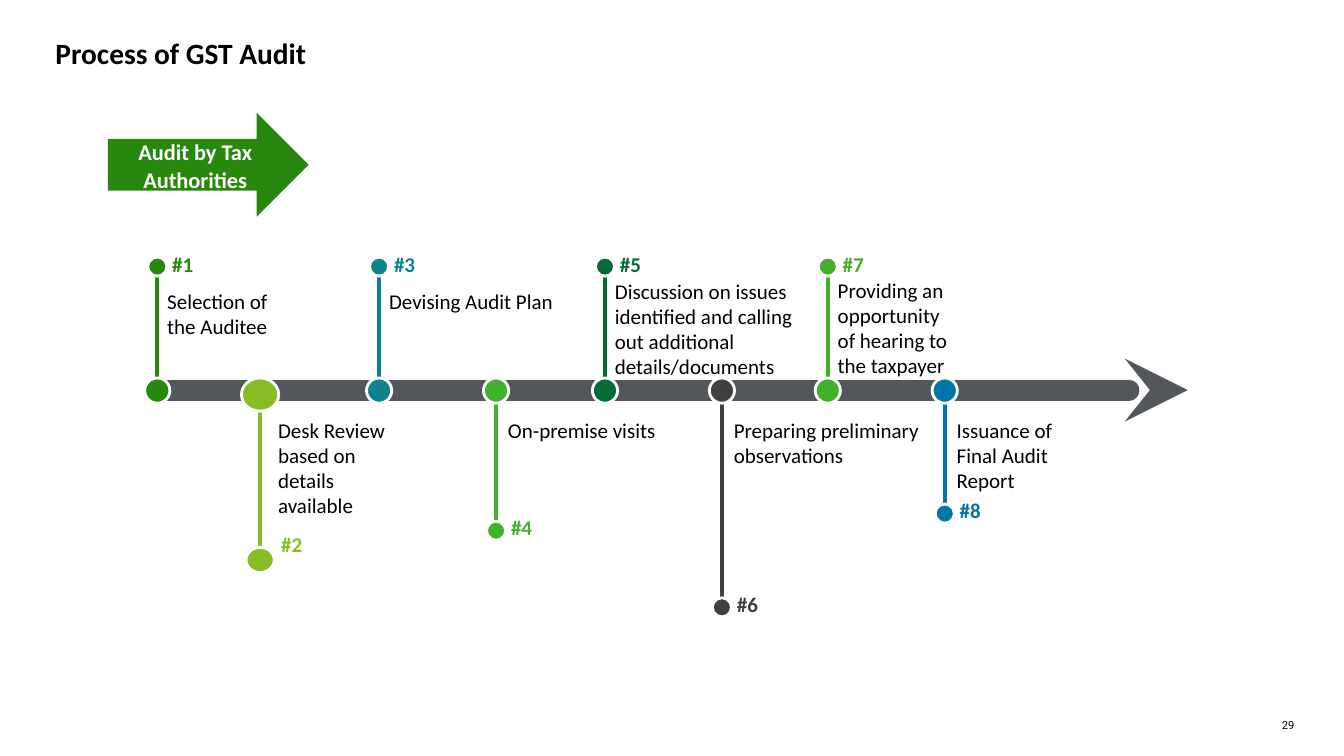
from collections import namedtuple

from lxml import etree
from pptx import Presentation
from pptx import util as u
from pptx.dml.color import RGBColor
from pptx.enum import shapes, text
from pptx.oxml.ns import qn

Box = namedtuple("Box", "left top width height")
Step = namedtuple("Step", "x color words note_top note_width note_height dot_top big",
                  defaults=(False,))

BLACK, WHITE, GREEN, AXIS = "000000", "FFFFFF", "26890D", "53565A"
UP_DOT = 0.1
STEPS = [
    Step(0.01, GREEN, "Selection of the Auditee", 0.36, 1.42, 0.61, UP_DOT),
    Step(1.03, "86BC25", "Desk Review based on details available", 1.64, 1.52, 1.11, 2.98, True),
    Step(2.21, "0D8390", "Devising Audit Plan", 0.36, 1.89, 0.35, UP_DOT),
    Step(3.37, "43B02A", "On-premise visits", 1.64, 1.86, 0.35, 2.72),
    Step(4.45, "046A38", "Discussion on issues identified and calling out additional details/documents",
         0.26, 2.02, 1.11, UP_DOT),
    Step(5.61, "404040", "Preparing preliminary observations", 1.64, 2.05, 0.61, 3.48),
    Step(6.66, "43B02A", "Providing an opportunity of hearing to the taxpayer", 0.25, 1.42, 1.11, UP_DOT),
    Step(7.82, "0076A8", "Issuance of Final Audit Report", 1.64, 1.52, 0.86, 2.55),
]


def rgb(value):
    return RGBColor.from_string(value)


def inches(*values):
    return [u.Inches(value) for value in values]


def write(frame, words, size, color, bold=False, name="Calibri", **paragraph_format):
    para = frame.paragraphs[0]
    for key, value in paragraph_format.items():
        setattr(para, key, value)
    span = para.add_run()
    span.text = words
    for key, value in {"name": name, "size": u.Pt(size), "bold": bold}.items():
        setattr(span.font, key, value)
    span.font.color.rgb = rgb(color)


def set_margins(frame, margin):
    for side in ("left", "top", "right", "bottom"):
        setattr(frame, f"margin_{side}", u.Inches(margin))


def add_text(page, box, words, size, color, wrap=True, margin=None, **formats):
    frame = page.shapes.add_textbox(*inches(*box)).text_frame
    frame.word_wrap = wrap
    if margin is not None:
        set_margins(frame, margin)
    write(frame, words, size, color, **formats)


def add_line(page, start, end, color, width):
    line = page.shapes.add_connector(shapes.MSO_CONNECTOR.STRAIGHT, *inches(*start, *end))
    line.line.color.rgb = rgb(color)
    line.line.width = u.Pt(width)
    etree.SubElement(line._element.spPr, qn("a:effectLst"))
    return line


def add_dot(page, x, top, width, height, color):
    dot = page.shapes.add_shape(shapes.MSO_SHAPE.OVAL, *inches(x - width / 2, top, width, height))
    dot.shadow.inherit = False
    dot.fill.solid()
    dot.fill.fore_color.rgb = rgb(color)
    dot.line.color.rgb = rgb(WHITE)
    dot.line.width = u.Pt(2)


def add_heading(page, box):
    add_text(page, box, "Process of GST Audit", 21, BLACK, margin=0, bold=True)


def add_page_number(page, box):
    add_text(page, box, "29", 8, BLACK, margin=0, name="Roboto", alignment=text.PP_ALIGN.RIGHT)


def add_banner(page, box):
    arrow = page.shapes.add_shape(shapes.MSO_SHAPE.RIGHT_ARROW, *inches(*box))
    arrow.shadow.inherit = False
    arrow.fill.solid()
    arrow.fill.fore_color.rgb = rgb(GREEN)
    arrow.line.fill.background()
    frame = arrow.text_frame
    frame.word_wrap = True
    frame.vertical_anchor = text.MSO_ANCHOR.MIDDLE
    set_margins(frame, 0.1)
    write(frame, "Audit by Tax Authorities", 16, WHITE, bold=True,
          alignment=text.PP_ALIGN.CENTER, line_spacing=1.06)


def add_step(page, box, number, step):
    x = box.left + step.x
    hub_top, dot_top = box.top + 1.3, box.top + step.dot_top
    hub_width, hub_height = (0.37, 0.33) if step.big else (0.25, 0.25)
    dot_width, dot_height = (0.28, 0.25) if step.big else (0.19, 0.19)
    above = dot_top < hub_top
    if above:
        stem = dot_top + dot_height, hub_top
        note_shift, label_lift = 0, 0.1
    else:
        stem = dot_top, hub_top + hub_height
        note_shift, label_lift = (0.08, 0.21) if step.big else (0.02, 0.11)
    label_shift = 0.11 if step.big else 0.05
    add_line(page, (x, stem[0]), (x, stem[1]), step.color, 3)
    add_dot(page, x, hub_top, hub_width, hub_height, step.color)
    add_dot(page, x, dot_top, dot_width, dot_height, step.color)
    note = Box(x + note_shift, box.top + step.note_top, step.note_width, step.note_height)
    add_text(page, note, step.words, 15, BLACK)
    label = Box(x + label_shift, dot_top - label_lift, 0.41, 0.35)
    add_text(page, label, f"#{number}", 15, step.color, wrap=False, bold=True)


def add_timeline(page, box):
    axis_y = box.top + 1.42
    axis = add_line(page, (box.left, axis_y), (box.left + box.width, axis_y), AXIS, 15)
    outline = axis.line._get_or_add_ln()
    outline.set("cap", "rnd")
    etree.SubElement(outline, qn("a:round"))
    etree.SubElement(outline, qn("a:tailEnd"), type="stealth")
    for number, step in enumerate(STEPS, 1):
        add_step(page, box, number, step)


def main():
    deck = Presentation()
    deck.slide_width, deck.slide_height = inches(13.33, 7.5)
    page = deck.slides.add_slide(deck.slide_layouts[6])
    add_page_number(page, Box(12.5, 7.13, 0.34, 0.13))
    add_heading(page, Box(0.55, 0.35, 12.21, 0.37))
    add_timeline(page, Box(1.55, 2.45, 10.23, 3.72))
    add_banner(page, Box(1.07, 1.12, 1.99, 1.03))
    deck.save("out.pptx")


if __name__ == "__main__":
    main()
